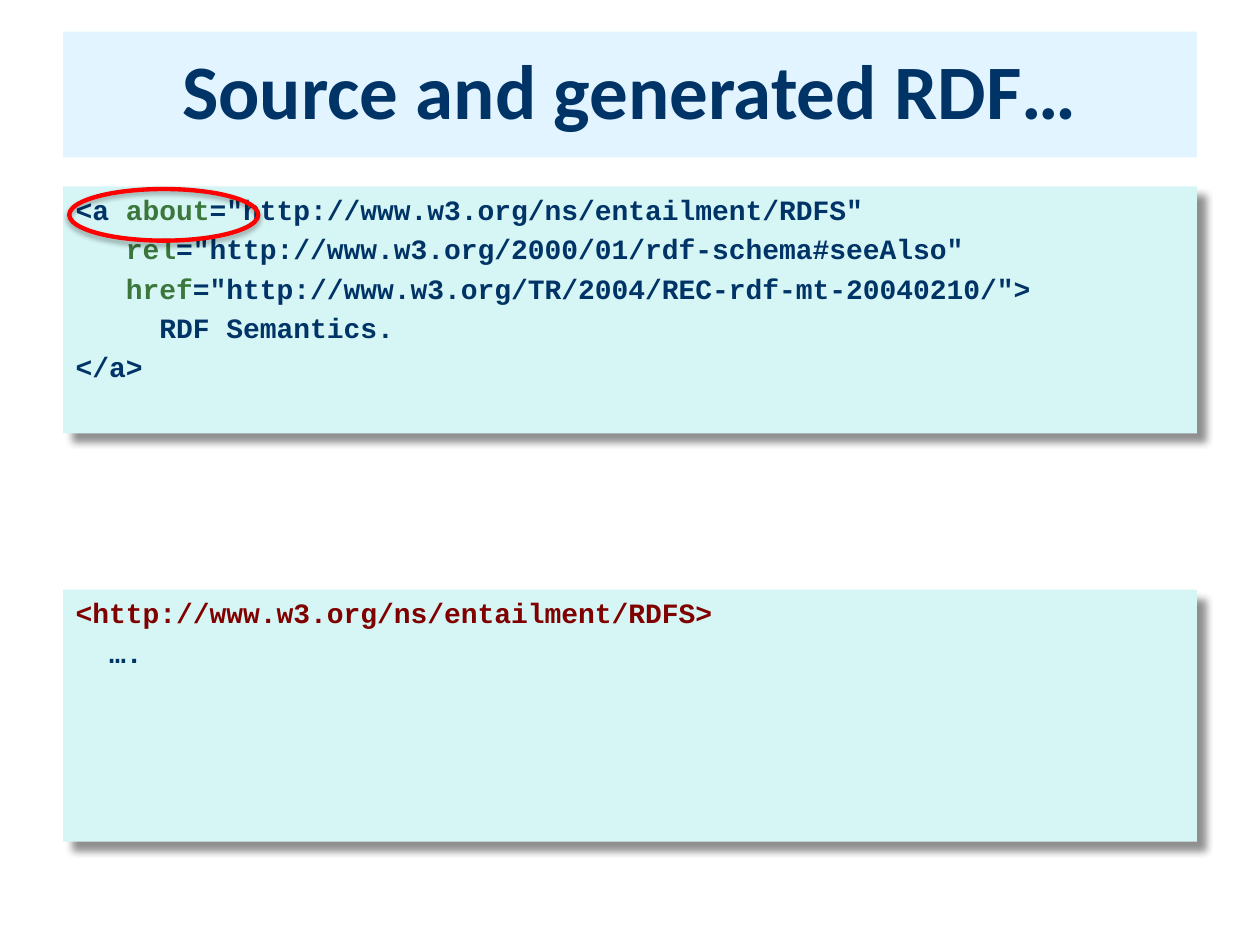
from lxml.etree import SubElement
from pptx import Presentation
from pptx.dml.color import RGBColor
from pptx.enum.shapes import MSO_SHAPE
from pptx.enum.text import MSO_ANCHOR, MSO_AUTO_SIZE, PP_ALIGN
from pptx.oxml.ns import qn
from pptx.util import Inches, Pt

NAVY = RGBColor(0x00, 0x33, 0x66)
GREEN = RGBColor(0x3B, 0x77, 0x3B)
MAROON = RGBColor(0x80, 0x00, 0x00)
RED = RGBColor(0xFF, 0x00, 0x00)
PALE_BLUE = RGBColor(0xE1, 0xF4, 0xFF)
PALE_TEAL = RGBColor(0xD6, 0xF5, 0xF5)

TITLE = "Source and generated RDF…"
SOURCE_CODE = [
    [("<a ", NAVY), ("about", GREEN),
     ('="http://www.w3.org/ns/entailment/RDFS"', NAVY)],
    [("   rel", GREEN),
     ('="http://www.w3.org/2000/01/rdf-schema#seeAlso"', NAVY)],
    [("   href", GREEN),
     ('="http://www.w3.org/TR/2004/REC-rdf-mt-20040210/">', NAVY)],
    [("     RDF Semantics.", NAVY)],
    [("</a>", NAVY)],
]
GENERATED_RDF = [
    [("<http://www.w3.org/ns/entailment/RDFS>", MAROON)],
    [("  ….", NAVY)],
]
# Lines of code, top and height in inches
CODE_PANELS = [(SOURCE_CODE, 1.48, 1.96), (GENERATED_RDF, 4.68, 2)]

LEFT, WIDTH = 0.5, 9


def place(shape, left, top, width, height):
    shape.left, shape.top = Inches(left), Inches(top)
    shape.width, shape.height = Inches(width), Inches(height)


def fill_with(shape, color):
    shape.fill.solid()
    shape.fill.fore_color.rgb = color


def add_span(para, text, font_name, size, color):
    span = para.add_run()
    span.text = text
    span.font.name = font_name
    span.font.size = Pt(size)
    span.font.bold = True
    span.font.color.rgb = color


def add_shadow(shape, opacity, blur, distance, angle):
    """Cast a black outer shadow; opacity in percent, lengths in points."""
    shape.shadow.inherit = False
    effects = shape.element.spPr.find(qn("a:effectLst"))
    shadow = SubElement(effects, qn("a:outerShdw"), blurRad=str(Pt(blur)),
                        dist=str(Pt(distance)), dir=str(angle * 60000),
                        algn="tl", rotWithShape="0")
    black = SubElement(shadow, qn("a:srgbClr"), val="000000")
    SubElement(black, qn("a:alpha"), val=str(opacity * 1000))


def remove_bullet(para):
    properties = para._p.get_or_add_pPr()
    properties.set("marL", "0")
    properties.set("indent", "0")
    SubElement(properties, qn("a:buNone"))


def write_code(box, lines):
    frame = box.text_frame
    frame.word_wrap = True
    frame.auto_size = MSO_AUTO_SIZE.NONE
    frame.vertical_anchor = MSO_ANCHOR.TOP
    for index, line in enumerate(lines):
        para = frame.add_paragraph() if index else frame.paragraphs[0]
        remove_bullet(para)
        if index == 0:
            para.space_before = Pt(0)
        for text, color in line:
            add_span(para, text, "Courier New", 16, color)


def main():
    deck = Presentation()
    deck.slide_width, deck.slide_height = Inches(10), Inches(7.5)
    page = deck.slides.add_slide(deck.slide_layouts.get_by_name("Two Content"))

    title, *panels = list(page.placeholders)[:3]
    place(title, LEFT, 0.25, WIDTH, 1)
    fill_with(title, PALE_BLUE)
    title.text_frame.auto_size = MSO_AUTO_SIZE.NONE
    title.text_frame.vertical_anchor = MSO_ANCHOR.MIDDLE
    heading = title.text_frame.paragraphs[0]
    heading.alignment = PP_ALIGN.CENTER
    heading.line_spacing = 0.9
    add_span(heading, TITLE, "Calibri", 44, NAVY)

    for panel, (lines, top, height) in zip(panels, CODE_PANELS):
        place(panel, LEFT, top, WIDTH, height)
        fill_with(panel, PALE_TEAL)
        add_shadow(panel, 43, 4, 7, 45)
        write_code(panel, lines)

    highlight = page.shapes.add_shape(MSO_SHAPE.OVAL, Inches(0.55), Inches(1.5),
                                      Inches(1.5), Inches(0.41))
    highlight.fill.background()
    highlight.line.color.rgb = RED
    highlight.line.width = Pt(2.5)
    add_shadow(highlight, 35, 3.1, 1.8, 90)

    deck.save("out.pptx")


if __name__ == "__main__":
    main()
